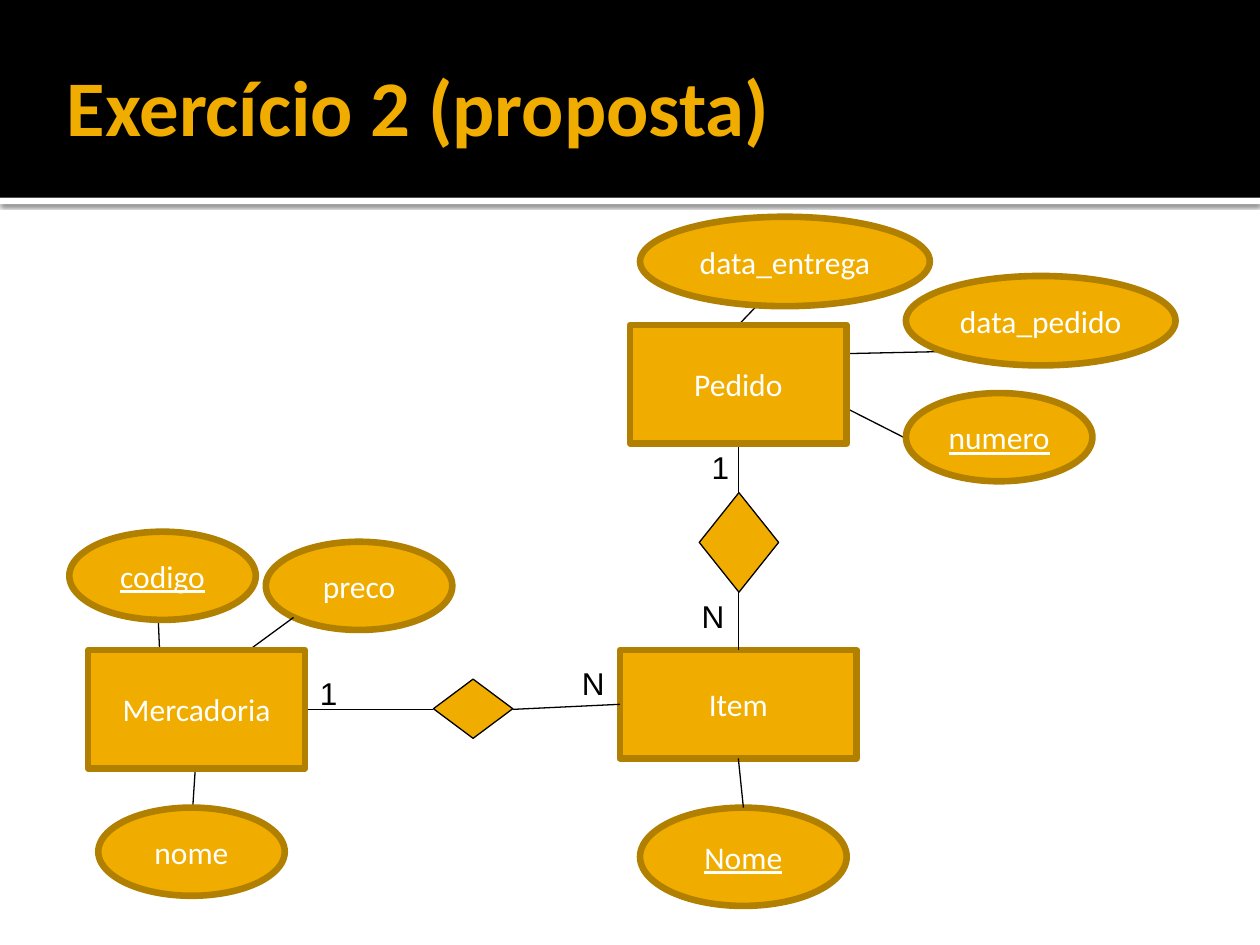
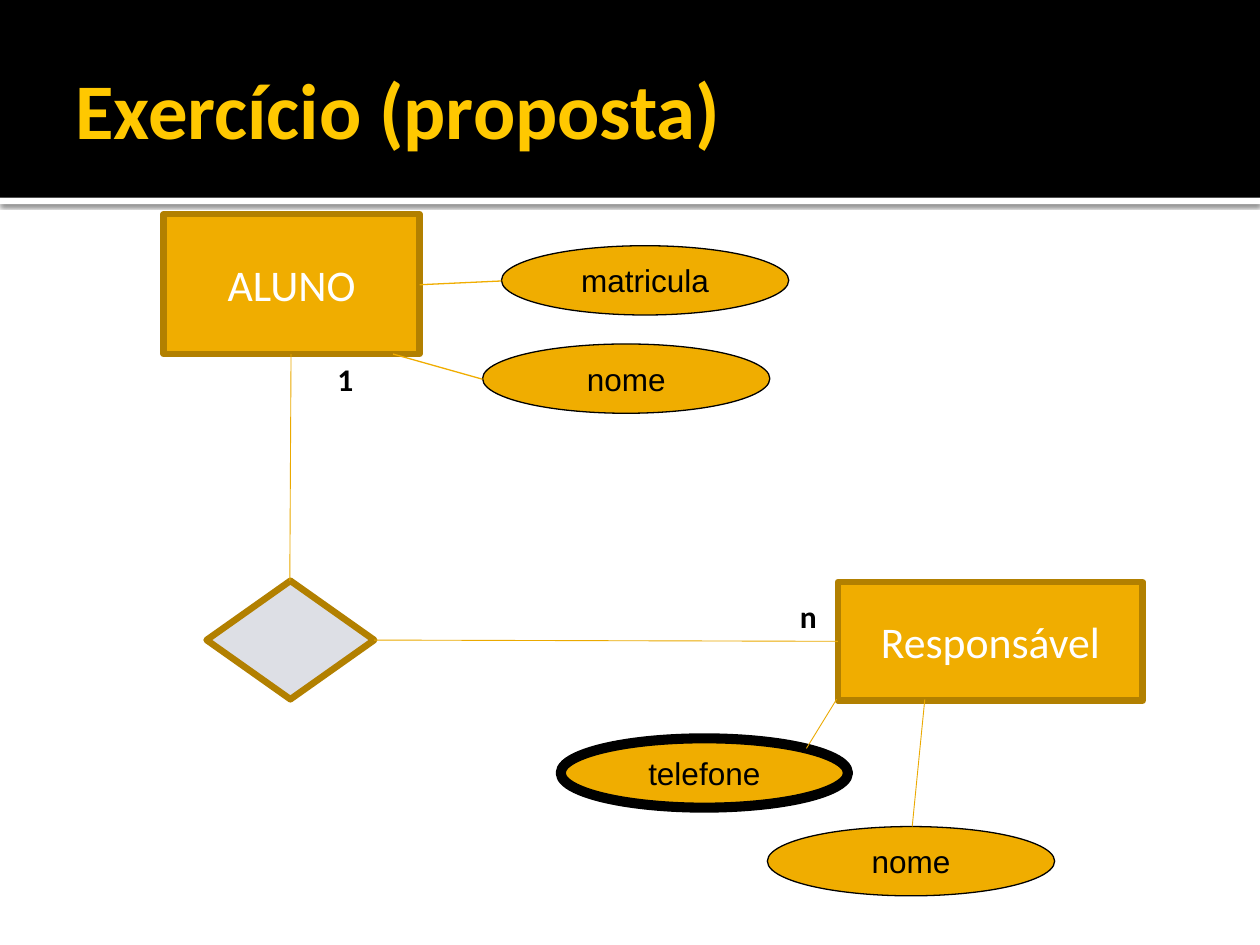
from dataclasses import dataclass, replace
from typing import NamedTuple

from lxml import etree
from pptx import Presentation
from pptx import util as u
from pptx.dml.color import RGBColor
from pptx.enum import shapes, text
from pptx.oxml import parse_xml
from pptx.oxml.ns import nsdecls, qn

PX = 9144  # EMU per px, 100 px to the inch


@dataclass(frozen=True)
class Theme:
    black: str = "000000"
    white: str = "FFFFFF"
    amber: str = "F0AD00"
    bronze: str = "B28000"
    ochre: str = "EBA900"
    yellow: str = "FFC800"
    mist: str = "DDDFE5"
    heading_font: str = "Calibri"
    plain_font: str = "Arial"
    title_size: int = 45
    entity_size: int = 25
    text_size: int = 18
    thin: float = 0.75
    hairline: float = 0.5
    border: float = 3.78
    heavy: float = 5.75


THEME = Theme()
Preset = shapes.MSO_SHAPE


class Area(NamedTuple):
    left: int
    top: int
    width: int
    height: int


@dataclass(frozen=True)
class Look:
    preset: Preset
    fill: str = THEME.amber
    line: str = THEME.bronze
    line_width: float = THEME.border
    font: str = THEME.heading_font
    size: int = THEME.text_size
    colour: str = THEME.white
    underline: bool = False
    wrap: bool = True


class Node(NamedTuple):
    look: Look
    area: Area
    caption: str = ""


class Link(NamedTuple):
    start: tuple[int, int]
    end: tuple[int, int]
    colour: str = THEME.black
    width: float = THEME.thin


class Cardinality(NamedTuple):
    caption: str
    area: Area
    font: str = THEME.plain_font
    bold: bool = False
    wrap: bool = True


class Diagram(NamedTuple):
    title: str
    title_area: Area
    title_colour: str
    figures: tuple[Node | Link | Cardinality, ...]  # back to front


ENTITY = Look(Preset.RECTANGLE)
LARGE_ENTITY = replace(ENTITY, size=THEME.entity_size)
ATTRIBUTE = Look(Preset.OVAL)
KEY = replace(ATTRIBUTE, underline=True)
RELATION = Look(Preset.FLOWCHART_DECISION, line=THEME.black, line_width=THEME.thin)
PALE_RELATION = Look(Preset.DIAMOND, fill=THEME.mist)
PLAIN_ATTRIBUTE = Look(Preset.OVAL, line=THEME.black, line_width=THEME.thin,
                       font=THEME.plain_font, colour=THEME.black, wrap=False)
MULTIVALUED = replace(PLAIN_ATTRIBUTE, line_width=THEME.heavy)


def attribute(look: Look, left: int, top: int, caption: str) -> Node:
    """Attribute oval of the usual size for its look."""
    width, height = (148, 70) if look.wrap else (228, 55)
    return Node(look, Area(left, top, width, height), caption)


def order_mark(caption: str, left: int, top: int) -> Cardinality:
    return Cardinality(caption, Area(left, top, 79, 40))


def student_mark(caption: str, left: int, top: int) -> Cardinality:
    return Cardinality(caption, Area(left, top, 34, 40), THEME.heading_font, True, False)


def role_link(start: tuple[int, int], end: tuple[int, int]) -> Link:
    return Link(start, end, THEME.ochre, THEME.hairline)


ORDERS = Diagram(
    "Exercício 2 (proposta)", Area(43, 21, 900, 125), THEME.amber, (
        Node(ENTITY, Area(492, 516, 188, 86), "Item"),
        Node(KEY, Area(508, 641, 164, 78), "Nome"),
        order_mark("1", 555, 351),
        order_mark("N", 547, 469),
        order_mark("1", 244, 530),
        order_mark("N", 452, 522),
        attribute(ATTRIBUTE, 211, 430, "preco"),
        Link((233, 490), (113, 578)),
        Link((125, 478), (128, 547)),
        Link((407, 563), (492, 559)),
        Link((590, 641), (586, 602)),
        Link((656, 281), (750, 279)),
        Link((648, 312), (719, 348)),
        Link((586, 469), (586, 516)),
        Node(RELATION, Area(344, 539, 63, 47)),
        Node(RELATION, Area(555, 391, 63, 79)),
        Link((152, 656), (156, 595)),
        Link((609, 234), (586, 258)),
        Link((242, 563), (344, 563)),
        Node(ENTITY, Area(70, 516, 172, 94), "Mercadoria"),
        attribute(ATTRIBUTE, 78, 641, "nome"),
        attribute(KEY, 55, 422, "codigo"),
        Link((586, 391), (586, 352)),
        Node(ENTITY, Area(500, 258, 172, 94), "Pedido"),
        Node(ATTRIBUTE, Area(719, 219, 214, 71), "data_pedido"),
        attribute(KEY, 719, 312, "numero"),
        Node(ATTRIBUTE, Area(508, 172, 230, 71), "data_entrega"),
    ))

STUDENTS = Diagram(
    "Exercício (proposta)", Area(50, 17, 900, 137), THEME.yellow, (
        Node(LARGE_ENTITY, Area(130, 170, 203, 111), "ALUNO"),
        Node(LARGE_ENTITY, Area(665, 462, 242, 94), "Responsável"),
        Node(PALE_RELATION, Area(164, 461, 133, 94)),
        role_link((231, 281), (230, 461)),
        role_link((297, 508), (665, 509)),
        student_mark("1", 258, 281),
        student_mark("n", 625, 469),
        attribute(MULTIVALUED, 445, 586, "telefone"),
        attribute(PLAIN_ATTRIBUTE, 609, 656, "nome"),
        attribute(PLAIN_ATTRIBUTE, 398, 195, "matricula"),
        Link((398, 223), (333, 226), THEME.amber),
        role_link((640, 594), (664, 555)),
        role_link((724, 656), (734, 555)),
        attribute(PLAIN_ATTRIBUTE, 383, 273, "nome"),
        Link((383, 301), (312, 281), THEME.amber),
    ))


def emu(*lengths: int) -> list[int]:
    return [length * PX for length in lengths]


def rgb(colour: str) -> RGBColor:
    return RGBColor.from_string(colour)


def write(shape, caption: str, font: str, size: int, colour: str,
          bold: bool = False, underline: bool = False):
    """Fill a shape with one formatted paragraph and return the paragraph."""
    para = shape.text_frame.paragraphs[0]
    para.text = caption
    para.font.name = font
    para.font.size = u.Pt(size)
    para.font.color.rgb = rgb(colour)
    para.font.bold = bold
    para.font.underline = underline
    return para


def draw_node(page, node: Node) -> None:
    look = node.look
    shape = page.shapes.add_shape(look.preset, *emu(*node.area))
    shape.shadow.inherit = False
    shape.fill.solid()
    shape.fill.fore_color.rgb = rgb(look.fill)
    shape.line.color.rgb = rgb(look.line)
    shape.line.width = u.Pt(look.line_width)
    if node.caption:
        shape.text_frame.word_wrap = look.wrap
        shape.text_frame.vertical_anchor = text.MSO_ANCHOR.MIDDLE
        para = write(shape, node.caption, look.font, look.size, look.colour,
                     underline=look.underline)
        para.alignment = text.PP_ALIGN.CENTER


def draw_link(page, link: Link) -> None:
    line = page.shapes.add_connector(shapes.MSO_CONNECTOR.STRAIGHT,
                                     *emu(*link.start, *link.end))
    line.line.color.rgb = rgb(link.colour)
    line.line.width = u.Pt(link.width)
    etree.SubElement(line.element.spPr, qn("a:effectLst"))


def draw_cardinality(page, mark: Cardinality) -> None:
    box = page.shapes.add_textbox(*emu(*mark.area))
    box.text_frame.word_wrap = mark.wrap
    box.text_frame.auto_size = text.MSO_AUTO_SIZE.SHAPE_TO_FIT_TEXT
    write(box, mark.caption, mark.font, THEME.text_size, THEME.black, mark.bold)


def draw_title(page, diagram: Diagram) -> None:
    title = page.shapes.title
    title.left, title.top, title.width, title.height = emu(*diagram.title_area)
    frame = title.text_frame
    frame.auto_size = text.MSO_AUTO_SIZE.NONE
    frame.vertical_anchor = text.MSO_ANCHOR.MIDDLE
    frame.margin_left = 10 * PX
    frame.margin_top = frame.margin_right = frame.margin_bottom = 5 * PX
    para = write(title, diagram.title, THEME.heading_font, THEME.title_size,
                 diagram.title_colour, bold=True)
    para.alignment = text.PP_ALIGN.LEFT


def add_header_bands(page) -> None:
    """Draw the header bands and move them to the layout, behind its title."""
    layout_title = page.slide_layout.placeholders[0]
    rule_area, header_area = Area(0, 157, 1000, 5), Area(0, 0, 1000, 157)
    for area, colour in ((rule_area, THEME.white), (header_area, THEME.black)):
        band = page.shapes.add_shape(Preset.RECTANGLE, *emu(*area))
        band.shadow.inherit = False
        band.fill.solid()
        band.fill.fore_color.rgb = rgb(colour)
        band.line.fill.background()
        if area is rule_area:
            effects = band.element.spPr.find(qn("a:effectLst"))
            effects.append(parse_xml(
                f'<a:outerShdw {nsdecls("a")} blurRad="{u.Pt(2.5)}" dist="{u.Pt(0.8)}" '
                f'dir="5400000" rotWithShape="0"><a:srgbClr val="{THEME.black}">'
                '<a:alpha val="60000"/></a:srgbClr></a:outerShdw>'))
        layout_title.element.addprevious(band.element)


DRAWERS = {Node: draw_node, Link: draw_link, Cardinality: draw_cardinality}


def main() -> None:
    deck = Presentation()
    deck.slide_width, deck.slide_height = emu(1000, 750)
    layout = deck.slide_layouts.get_by_name("Title Only")
    for diagram in (ORDERS, STUDENTS):
        page = deck.slides.add_slide(layout)
        if len(deck.slides) == 1:
            add_header_bands(page)
        draw_title(page, diagram)
        for figure in diagram.figures:
            DRAWERS[type(figure)](page, figure)
    deck.save("out.pptx")


if __name__ == "__main__":
    main()
